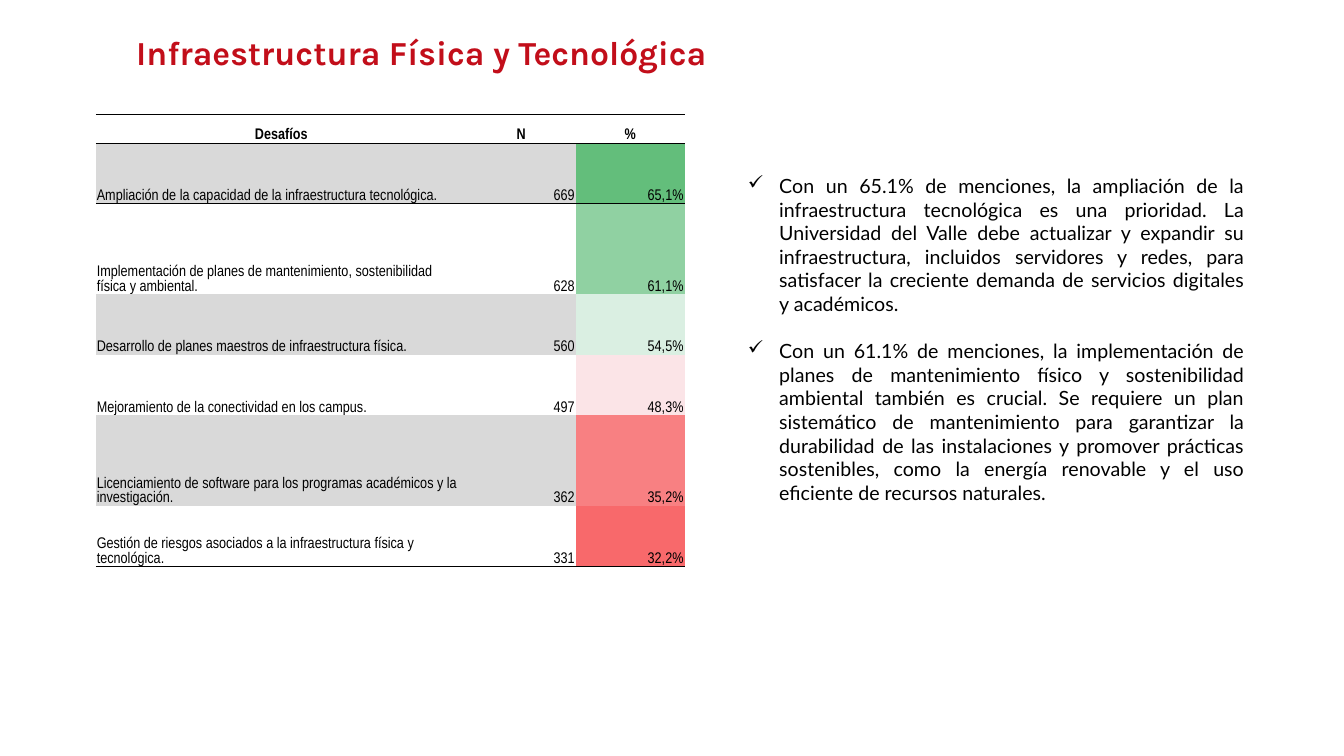
"""Build the slide on physical and technological infrastructure challenges."""
from lxml import etree
from pptx import Presentation
from pptx.dml.color import RGBColor
from pptx.enum.text import MSO_ANCHOR, MSO_AUTO_SIZE, PP_ALIGN
from pptx.oxml import parse_xml
from pptx.oxml.ns import nsdecls, qn
from pptx.util import Inches, Pt

COLORS = {"heading": "C20E1A", "ink": "000000", "band": "D9D9D9"}
NO_STYLE = "{2D5ABB26-0587-4C30-8999-92F81FD0307C}"


def add_run(paragraph, text, font_name, size, color, bold=False):
    run = paragraph.add_run()
    run.text = text
    run.font.name = font_name
    run.font.size = Pt(size)
    run.font.bold = bold
    run.font.color.rgb = RGBColor.from_string(COLORS[color])


def add_rule(cell, side):
    cell._tc.get_or_add_tcPr().append(parse_xml(
        f'<a:{side} {nsdecls("a")} w="6350"><a:solidFill>'
        f'<a:srgbClr val="{COLORS["ink"]}"/></a:solidFill></a:{side}>'))


prs = Presentation()
prs.slide_width, prs.slide_height = Inches(13.33), Inches(7.5)
slide = prs.slides.add_slide(prs.slide_layouts[5])

heading = slide.shapes.title
heading.left, heading.top = Inches(1.25), Inches(0.27)
heading.width, heading.height = Inches(9.22), Inches(0.5)
heading.text_frame.vertical_anchor = MSO_ANCHOR.TOP
heading.text_frame.auto_size = MSO_AUTO_SIZE.NONE
heading_line = heading.text_frame.paragraphs[0]
heading_line.alignment = PP_ALIGN.LEFT
add_run(heading_line, "Infraestructura Física y Tecnológica", "Karla", 24, "heading", True)

challenges = [
    ("Desafíos", "N", "%", None, 0.29),
    ("Ampliación de la capacidad de la infraestructura tecnológica.",
     "669", "65,1%", "63BE7B", 0.6),
    ("Implementación de planes de mantenimiento, sostenibilidad física y ambiental.",
     "628", "61,1%", "90D1A2", 0.9),
    ("Desarrollo de planes maestros de infraestructura física.",
     "560", "54,5%", "DAEFE2", 0.6),
    ("Mejoramiento de la conectividad en los campus.",
     "497", "48,3%", "FBE4E7", 0.6),
    ("Licenciamiento de software para los programas académicos y la investigación.",
     "362", "35,2%", "F88082", 0.9),
    ("Gestión de riesgos asociados a la infraestructura física y tecnológica.",
     "331", "32,2%", "F8696B", 0.6),
]
last_row = len(challenges) - 1
ranking = slide.shapes.add_table(
    len(challenges), 3, Inches(0.95), Inches(1.13), Inches(5.84), Inches(4.49)).table
ranking.first_row = ranking.horz_banding = False
ranking._tbl.tblPr.find(qn("a:tableStyleId")).text = NO_STYLE
for column, width in zip(ranking.columns, (3.68, 1.08, 1.08)):
    column.width = Inches(width)

for row, (*values, heat, height) in enumerate(challenges):
    ranking.rows[row].height = Inches(height)
    band = COLORS["band"] if row % 2 else None
    for col, (value, shade) in enumerate(zip(values, (band, band, heat))):
        cell = ranking.cell(row, col)
        cell.margin_left = cell.margin_right = cell.margin_top = Inches(0.01)
        cell.margin_bottom = 0
        cell.vertical_anchor = MSO_ANCHOR.BOTTOM
        if row <= 1:
            add_rule(cell, "lnT")
        if row in (0, last_row):
            add_rule(cell, "lnB")
        if shade:
            cell.fill.solid()
            cell.fill.fore_color.rgb = RGBColor.from_string(shade)
        else:
            cell.fill.background()
        entry = cell.text_frame.paragraphs[0]
        if row == 0:
            entry.alignment = PP_ALIGN.CENTER
        else:
            entry.alignment = PP_ALIGN.RIGHT if col else PP_ALIGN.LEFT
        add_run(entry, value, "Arial Narrow", 11, "ink", row == 0)

findings = [
    "Con un 65.1% de menciones, la ampliación de la infraestructura tecnológica es una "
    "prioridad. La Universidad del Valle debe actualizar y expandir su infraestructura, "
    "incluidos servidores y redes, para satisfacer la creciente demanda de servicios "
    "digitales y académicos.",
    "Con un 61.1% de menciones, la implementación de planes de mantenimiento físico y "
    "sostenibilidad ambiental también es crucial. Se requiere un plan sistemático de "
    "mantenimiento para garantizar la durabilidad de las instalaciones y promover "
    "prácticas sostenibles, como la energía renovable y el uso eficiente de recursos "
    "naturales.",
]
analysis = slide.shapes.add_textbox(
    Inches(7.32), Inches(1.68), Inches(5.12), Inches(3.4)).text_frame
analysis.word_wrap = True
for index, finding in enumerate(findings):
    point = analysis.add_paragraph() if index else analysis.paragraphs[0]
    properties = point._p.get_or_add_pPr()
    properties.set("marL", str(Inches(0.31)))
    properties.set("indent", str(Inches(-0.31)))
    etree.SubElement(properties, qn("a:buChar")).set("char", "✓")
    point.alignment = PP_ALIGN.JUSTIFY
    if index:
        point.space_before = Pt(17)
    add_run(point, finding, "Lato", 14, "ink")

prs.save("out.pptx")
